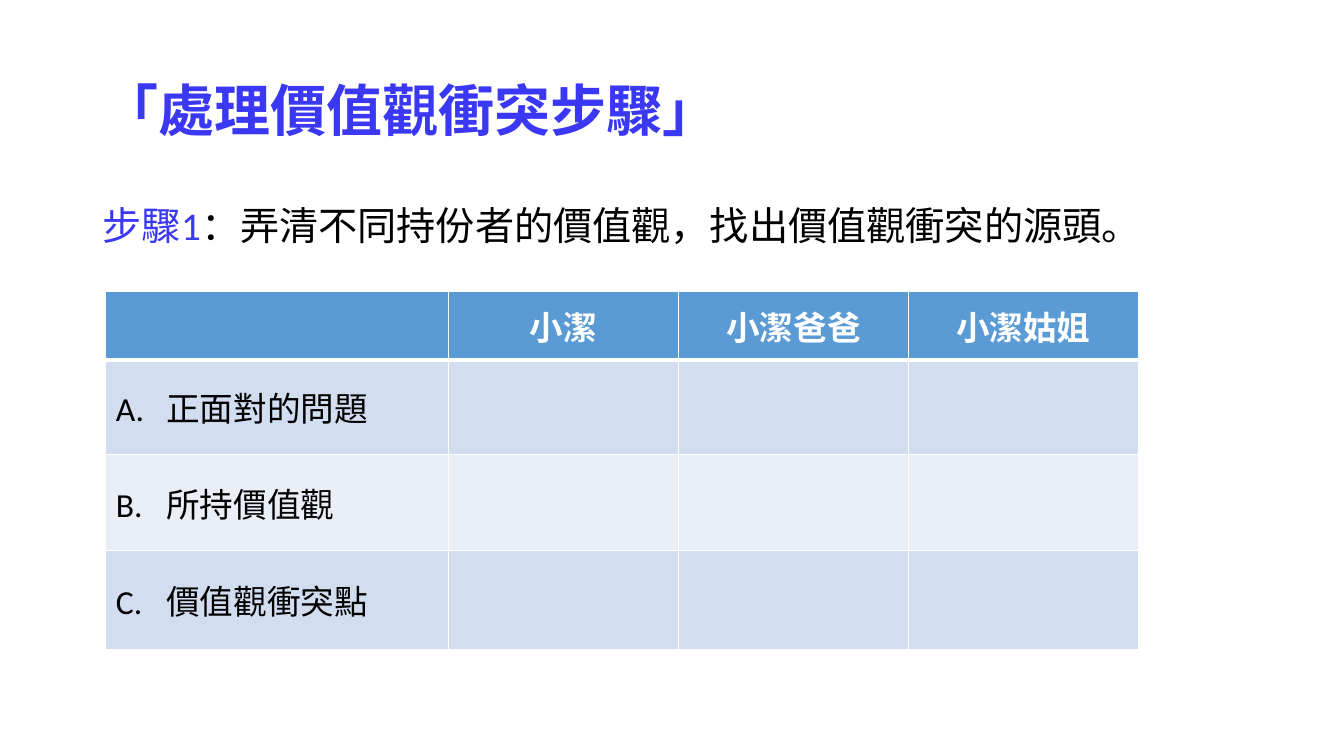
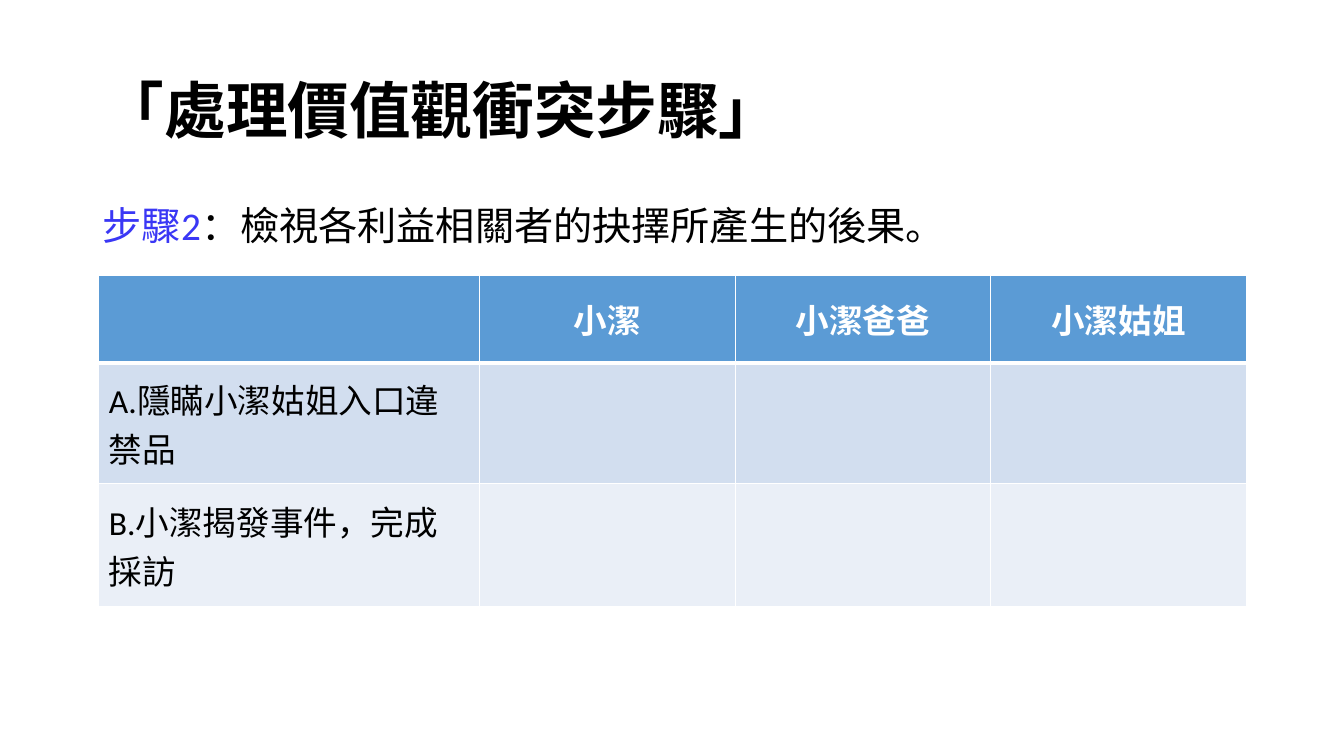
from dataclasses import dataclass

from lxml import etree
from pptx import Presentation
from pptx.dml.color import RGBColor
from pptx.enum.text import MSO_ANCHOR, PP_ALIGN
from pptx.oxml.ns import qn
from pptx.util import Inches, Pt

LEFT, CENTER = PP_ALIGN.LEFT, PP_ALIGN.CENTER
MIDDLE, TOP = MSO_ANCHOR.MIDDLE, MSO_ANCHOR.TOP


@dataclass(frozen=True)
class Theme:
    font: str = "Calibri"
    accent: str = "3A37F5"
    text: str = "000000"
    white: str = "FFFFFF"
    header: str = "5B9BD5"
    bands: tuple = ("D2DEEF", "EAEFF7")
    step_size: int = 28
    table_size: int = 24
    line_spacing: float = 0.9
    rule: int = 1
    header_rule: int = 3


THEME = Theme()
SLIDE_SIZE = (13.33, 7.5)
TITLE_BOX = (0.92, 0.4, 11.5, 1.45)
BODY_BOX = (0.92, 2, 11.5, 4.76)
LABEL_SHARE = 0.332
TITLE = "「處理價值觀衝突步驟」"
PEOPLE = ("小潔", "小潔爸爸", "小潔姑姐")

STEPS = (
    {
        "title_size": 40,
        "title_color": THEME.accent,
        "step": "步驟1",
        "task": "：弄清不同持份者的價值觀，找出價值觀衝突的源頭。",
        "table_box": (1.05, 2.89, 10.24),
        "row_heights": (0.68, 0.94, 0.95, 0.98),
        "labels": ("A.\t正面對的問題", "B.\t所持價值觀", "C.\t價值觀衝突點"),
    },
    {
        "title_size": 44,
        "title_color": THEME.text,
        "step": "步驟2",
        "task": "：檢視各利益相關者的抉擇所產生的後果。",
        "table_box": (0.98, 2.73, 11.38),
        "row_heights": (0.87, 1.2, 1.22),
        "labels": ("A.隱瞞小潔姑姐入口違禁品", "B.小潔揭發事件，完成採訪"),
    },
)


def add_run(paragraph, text, size, color, bold=False):
    run = paragraph.add_run()
    run.text = text
    font = run.font
    font.name, font.size, font.bold = THEME.font, Pt(size), bold
    font.color.rgb = RGBColor.from_string(color)


def place_placeholder(shape, box, anchor):
    """Move a placeholder and return its first paragraph, left-aligned."""
    shape.left, shape.top, shape.width, shape.height = map(Inches, box)
    shape.text_frame.vertical_anchor = anchor
    paragraph = shape.text_frame.paragraphs[0]
    paragraph.alignment = LEFT
    paragraph.line_spacing = THEME.line_spacing
    paragraph.space_before = Pt(0)
    return paragraph


def add_title(slide, size, color):
    paragraph = place_placeholder(slide.shapes.title, TITLE_BOX, MIDDLE)
    add_run(paragraph, TITLE, size, color, bold=True)


def add_step(slide, step, task):
    paragraph = place_placeholder(slide.placeholders[1], BODY_BOX, TOP)
    properties = paragraph._p.get_or_add_pPr()
    properties.set("marL", "0")
    properties.set("indent", "0")
    etree.SubElement(properties, qn("a:buNone"))
    add_run(paragraph, step, THEME.step_size, THEME.accent)
    add_run(paragraph, task, THEME.step_size, THEME.text)


def set_borders(cell, top, bottom):
    properties = cell._tc.get_or_add_tcPr()
    widths = {"lnL": THEME.rule, "lnR": THEME.rule, "lnT": top, "lnB": bottom}
    for position, (side, width) in enumerate(widths.items()):
        line = etree.Element(qn(f"a:{side}"), w=str(Pt(width)))
        fill = etree.SubElement(line, qn("a:solidFill"))
        etree.SubElement(fill, qn("a:srgbClr"), val=THEME.white)
        properties.insert(position, line)


def format_cell(cell, row):
    fill = THEME.bands[(row - 1) % 2] if row else THEME.header
    cell.fill.solid()
    cell.fill.fore_color.rgb = RGBColor.from_string(fill)
    cell.vertical_anchor = MIDDLE
    set_borders(cell,
                top=THEME.header_rule if row == 1 else THEME.rule,
                bottom=THEME.rule if row else THEME.header_rule)


def add_stakeholder_table(slide, box, row_heights, labels):
    left, top, width = box
    frame = slide.shapes.add_table(
        len(row_heights), len(PEOPLE) + 1, Inches(left), Inches(top),
        Inches(width), Inches(sum(row_heights)))
    table = frame.table
    person_share = (1 - LABEL_SHARE) / len(PEOPLE)
    for index, column in enumerate(table.columns):
        column.width = Inches(width * (person_share if index else LABEL_SHARE))
    for index, height in enumerate(row_heights):
        table.rows[index].height = Inches(height)
        for cell in table.rows[index].cells:
            format_cell(cell, index)
    for column, person in enumerate(PEOPLE, 1):
        paragraph = table.cell(0, column).text_frame.paragraphs[0]
        paragraph.alignment = CENTER
        add_run(paragraph, person, THEME.table_size, THEME.white, bold=True)
    for row, label in enumerate(labels, 1):
        paragraph = table.cell(row, 0).text_frame.paragraphs[0]
        add_run(paragraph, label, THEME.table_size, THEME.text)


def add_step_slide(presentation, content):
    slide = presentation.slides.add_slide(presentation.slide_layouts[1])
    add_title(slide, content["title_size"], content["title_color"])
    add_step(slide, content["step"], content["task"])
    add_stakeholder_table(slide, content["table_box"],
                          content["row_heights"], content["labels"])


def main():
    presentation = Presentation()
    presentation.slide_width, presentation.slide_height = map(Inches, SLIDE_SIZE)
    for content in STEPS:
        add_step_slide(presentation, content)
    presentation.save("out.pptx")


if __name__ == "__main__":
    main()
